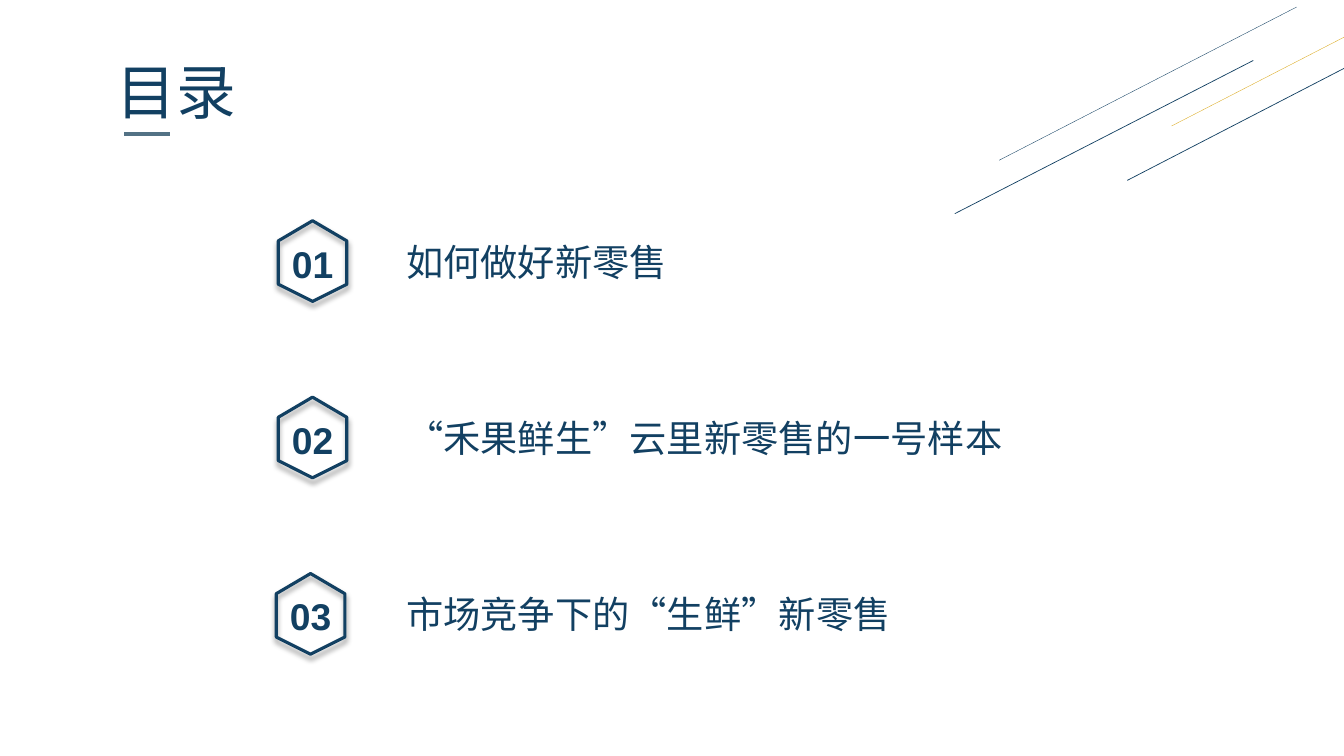
from lxml.etree import SubElement
from pptx import Presentation
from pptx.dml.color import RGBColor
from pptx.enum.shapes import MSO_CONNECTOR
from pptx.enum.text import MSO_AUTO_SIZE, PP_ALIGN
from pptx.oxml import parse_xml
from pptx.oxml.ns import nsdecls, qn
from pptx.util import Pt

PX = 9144  # 100 px to the inch
COLORS = {"navy": "124062", "slate": "537285", "gold": "DCAA1F"}
CJK = "Noto Sans CJK SC"
SHADOW = (
    f'<a:effectLst {nsdecls("a")}><a:outerShdw blurRad="50800" dist="38100" dir="5400000" '
    'algn="t" rotWithShape="0"><a:srgbClr val="000000"><a:alpha val="40000"/></a:srgbClr>'
    "</a:outerShdw></a:effectLst>"
)


def add_text(shapes, box, text, size, font, bold=False, centred=False):
    shape = shapes.add_textbox(*(value * PX for value in box))
    frame = shape.text_frame
    frame.word_wrap = not centred
    frame.auto_size = MSO_AUTO_SIZE.SHAPE_TO_FIT_TEXT
    paragraph = frame.paragraphs[0]
    paragraph.alignment = PP_ALIGN.CENTER if centred else PP_ALIGN.LEFT
    run = paragraph.add_run()
    run.text = text
    run.font.size = Pt(size)
    run.font.bold = bold
    run.font.name = font
    run.font.color.rgb = RGBColor.from_string(COLORS["navy"])
    properties = run.font._element
    properties.set("lang", "zh-CN")
    SubElement(properties, qn("a:ea")).set("typeface", font)


def add_line(start, end, color, width):
    line = slide.shapes.add_connector(
        MSO_CONNECTOR.STRAIGHT, *(value * PX for value in start + end))
    line.line.color.rgb = RGBColor.from_string(COLORS[color])
    line.line.width = Pt(width)
    SubElement(line._element.spPr, qn("a:effectLst"))


presentation = Presentation()
presentation.slide_width = 1333 * PX
presentation.slide_height = 750 * PX
slide = presentation.slides.add_slide(presentation.slide_layouts[6])

# Title
add_text(slide.shapes, (106, 49, 153, 82), "目录", 42.6, CJK)
add_line((123, 133), (169, 133), "slate", 2.25)

# Corner lines
for start, end, color, width in [
    ((947, 212), (1243, 60), "navy", 0.5),
    ((991, 159), (1286, 7), "navy", 0.25),
    ((1118, 179), (1414, 26), "navy", 0.5),
    ((1162, 125), (1457, -27), "gold", 0.25),
]:
    add_line(start, end, color, width)

# Contents: a numbered hexagon and a heading on each row
ROW_TOP, ROW_STEP = 219, 175
HEXAGON = [(34, 0), (68, 20), (68, 63), (34, 80), (0, 63), (0, 20)]
entries = [
    ("如何做好新零售", 276, 363),
    ("“禾果鲜生”云里新零售的一号样本", 276, 626),
    ("市场竞争下的“生鲜”新零售", 274, 555),
]
for row, (heading, left, width) in enumerate(entries):
    top = ROW_TOP + row * ROW_STEP
    badge = slide.shapes.add_group_shape()
    corners = [(left + x, top + y) for x, y in HEXAGON]
    builder = badge.shapes.build_freeform(*corners[0], scale=PX)
    builder.add_line_segments(corners[1:], close=True)
    hexagon = builder.convert_to_shape()
    hexagon.fill.background()
    hexagon.line.color.rgb = RGBColor.from_string(COLORS["navy"])
    hexagon.line.width = Pt(2.25)
    hexagon._element.spPr.append(parse_xml(SHADOW))
    add_text(badge.shapes, (left + 3, top + 15, 62, 55), f"{row + 1:02}", 26.6, "Arial",
             bold=True, centred=True)
    add_text(slide.shapes, (393, top + 13, width, 55), heading, 26.6, CJK)

presentation.save("out.pptx")
